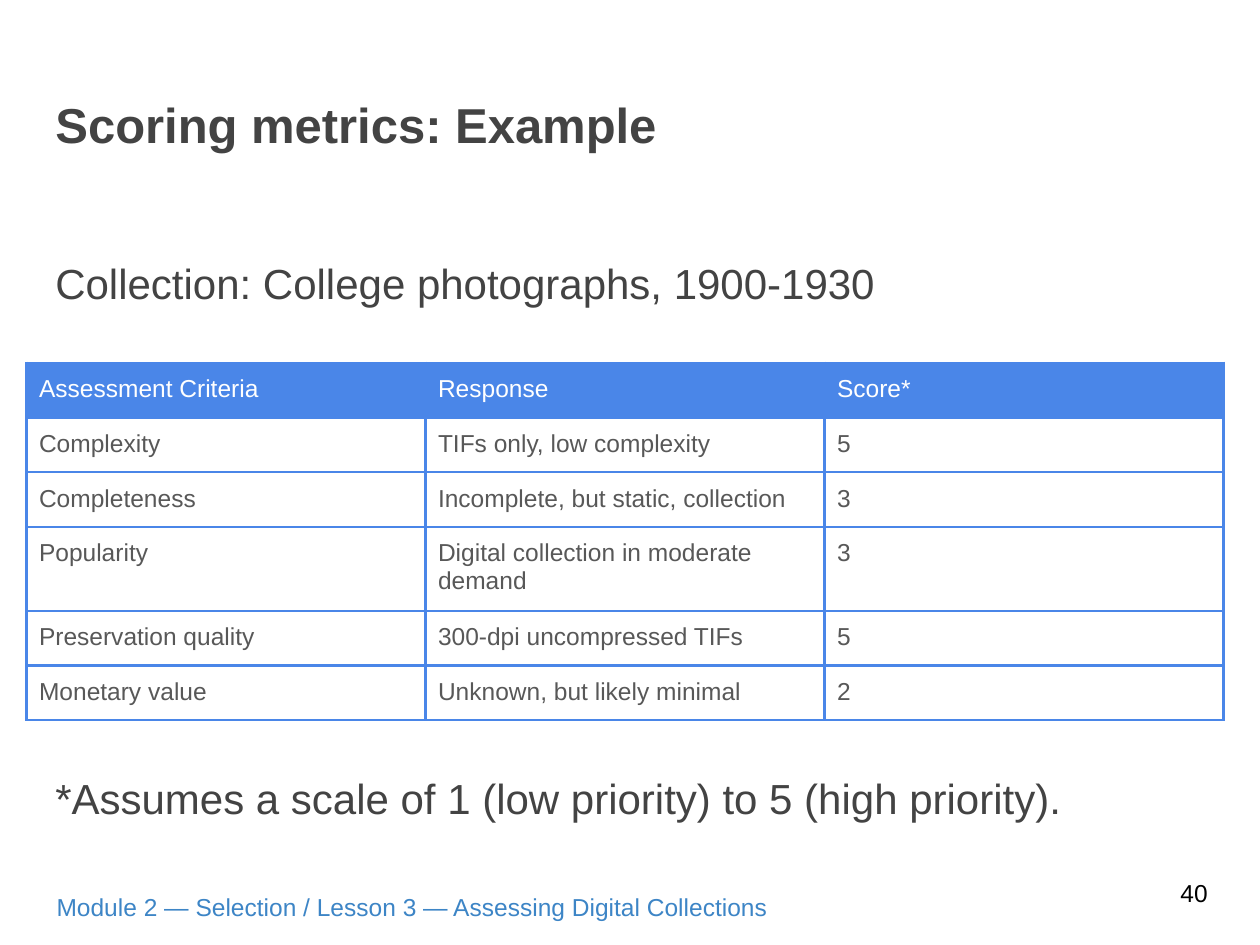
from pptx import Presentation
from pptx.dml.color import RGBColor
from pptx.enum.text import MSO_ANCHOR, PP_ALIGN
from pptx.oxml import parse_xml
from pptx.oxml.ns import nsdecls
from pptx.util import Inches, Pt

# Content
TITLE = "Scoring metrics: Example"
COLLECTION = "Collection: College photographs, 1900-1930"
SCALE_NOTE = "*Assumes a scale of 1 (low priority) to 5 (high priority)."
FOOTER = "Module 2 — Selection / Lesson 3 — Assessing Digital Collections"
PAGE_NUMBER = "40"
SCORES = [
    ("Assessment Criteria", "Response", "Score*"),
    ("Complexity", "TIFs only, low complexity", "5"),
    ("Completeness", "Incomplete, but static, collection", "3"),
    ("Popularity", "Digital collection in moderate demand", "3"),
    ("Preservation quality", "300-dpi uncompressed TIFs", "5"),
    ("Monetary value", "Unknown, but likely minimal", "2"),
]

# Style
FONT = "Arial"
DARK = RGBColor(0x43, 0x43, 0x43)
GRAY = RGBColor(0x58, 0x58, 0x58)
BLACK = RGBColor(0, 0, 0)
WHITE = RGBColor(0xFF, 0xFF, 0xFF)
BLUE = RGBColor(0x4A, 0x86, 0xE8)
FOOTER_BLUE = RGBColor(0x3D, 0x85, 0xC6)
MARGIN = Inches(0.1)
ROW_HEIGHT, TALL_ROW_HEIGHT = 0.42, 0.64
WRAPPED_ROW = 3


def write(frame, text, size, color, bold=False):
    frame.text = text
    para = frame.paragraphs[0]
    para.alignment = PP_ALIGN.LEFT
    font = para.font
    font.name, font.size, font.bold = FONT, Pt(size), bold
    font.color.rgb = color
    return para


def format_frame(frame, anchor=MSO_ANCHOR.TOP):
    frame.word_wrap = True
    frame.vertical_anchor = anchor
    frame.margin_left = frame.margin_right = MARGIN
    frame.margin_top = frame.margin_bottom = MARGIN


def add_text(page, place, text, size, color, anchor=MSO_ANCHOR.TOP):
    box = page.shapes.add_textbox(*map(Inches, place))
    format_frame(box.text_frame, anchor)
    return write(box.text_frame, text, size, color)


def add_borders(cell, color, width):
    properties = cell._tc.get_or_add_tcPr()
    for index, side in enumerate(("lnL", "lnR", "lnT", "lnB")):
        properties.insert(index, parse_xml(
            f'<a:{side} {nsdecls("a")} w="{Pt(width)}"><a:solidFill>'
            f'<a:srgbClr val="{color}"/></a:solidFill></a:{side}>'))


deck = Presentation()
deck.slide_width, deck.slide_height = Inches(10), Inches(7.5)
page = deck.slides.add_slide(deck.slide_layouts[5])

# Title
title = page.shapes.title
title.left, title.top, title.width, title.height = map(
    Inches, (0.34, 0.65, 9.32, 0.83))
format_frame(title.text_frame)
write(title.text_frame, TITLE, 28, DARK, bold=True)

# Lines above and below the table
for top, text in ((1.88, COLLECTION), (5.97, SCALE_NOTE)):
    para = add_text(page, (0.34, top, 9.32, 0.69), text, 24, DARK)
    para.line_spacing = 1.15

# Score table
heights = [ROW_HEIGHT] * len(SCORES)
heights[WRAPPED_ROW] = TALL_ROW_HEIGHT
table = page.shapes.add_table(
    len(SCORES), len(SCORES[0]), Inches(0.21), Inches(2.88),
    Inches(9.5), Inches(sum(heights))).table
table.first_row = table.horz_banding = False
for row, height in zip(table.rows, heights):
    row.height = Inches(height)
for row_index, values in enumerate(SCORES):
    is_header = row_index == 0
    for column_index, value in enumerate(values):
        cell = table.cell(row_index, column_index)
        cell.margin_left = cell.margin_right = MARGIN
        cell.margin_top = cell.margin_bottom = MARGIN
        write(cell.text_frame, value, 14, WHITE if is_header else GRAY)
        if is_header:
            cell.fill.solid()
            cell.fill.fore_color.rgb = BLUE
        else:
            cell.fill.background()
        add_borders(cell, BLUE, 1.5)

# Footer and page number
add_text(page, (0.35, 6.98, 9.05, 0.4), FOOTER, 14, FOOTER_BLUE)
add_text(page, (9.27, 6.8, 0.6, 0.57), PAGE_NUMBER, 14, BLACK,
         MSO_ANCHOR.MIDDLE)

deck.save("out.pptx")
